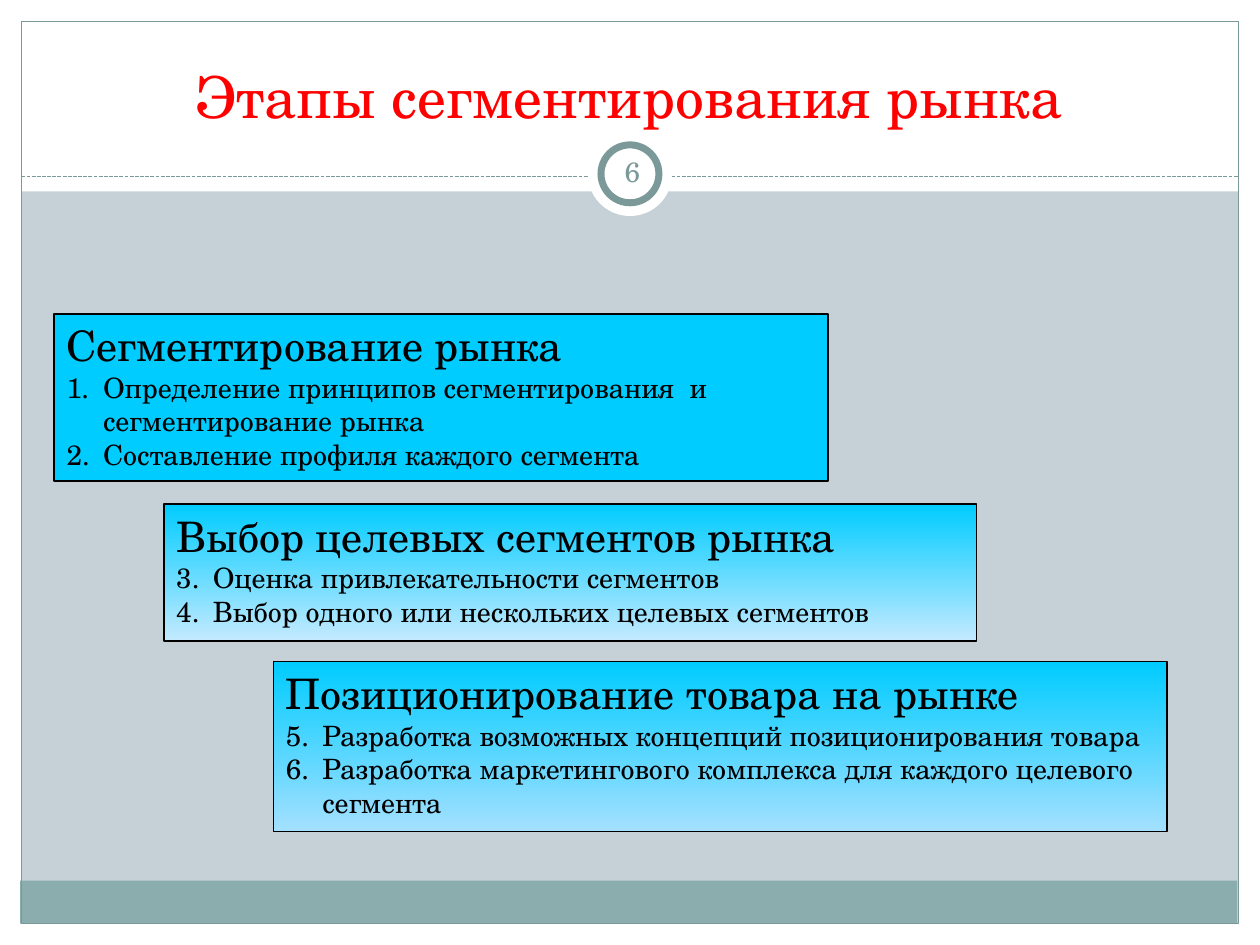
import pptx
import pptx.dml.color
import pptx.enum.dml
import pptx.enum.shapes
import pptx.enum.text
import pptx.oxml
import pptx.oxml.ns
import pptx.util

WIDTH, HEIGHT = 10, 7.5
MARGIN = 0.17
FRAME_WIDTH = WIDTH - 2 * MARGIN
HEADER_HEIGHT = 1.52
RULE_Y = 1.4
BOX_LEFT, BOX_STEP = 0.43, 0.87
INDENT = 0.29
FONT = "TeX Gyre Schola"
TEAL, WHITE, BLACK, CYAN = "7C999A", "FFFFFF", "000000", "00CCFF"
SHAPE = pptx.enum.shapes.MSO_SHAPE
ALIGN = pptx.enum.text.PP_ALIGN
ANCHOR = pptx.enum.text.MSO_ANCHOR

# Top, width, height, lower gradient colour, first number, heading, steps
STAGES = [
    (2.49, 6.14, 1.33, None, 1, "Сегментирование рынка",
     ["Определение принципов сегментирования  и сегментирование рынка",
      "Составление профиля каждого сегмента"]),
    (4, 6.45, 1.09, "C4EAFF", 3, "Выбор целевых сегментов рынка",
     ["Оценка привлекательности сегментов",
      "Выбор одного или нескольких целевых сегментов"]),
    (5.25, 7.09, 1.35, "A4E0FF", 5, "Позиционирование товара на рынке",
     ["Разработка возможных концепций позиционирования товара",
      "Разработка маркетингового комплекса для каждого целевого сегмента"]),
]


def rgb(value):
    return pptx.dml.color.RGBColor.from_string(value)


def inches(*lengths):
    return [pptx.util.Inches(length) for length in lengths]


def set_all(target, values):
    for name, value in values.items():
        setattr(target, name, value)


def add_panel(slide, box, fill=None, line=None, weight=0.75, kind=SHAPE.RECTANGLE):
    panel = slide.shapes.add_shape(kind, *inches(*box))
    panel.shadow.inherit = False
    if fill:
        panel.fill.solid()
        panel.fill.fore_color.rgb = rgb(fill)
    else:
        panel.fill.background()
    if line:
        panel.line.color.rgb = rgb(line)
        panel.line.width = pptx.util.Pt(weight)
    else:
        panel.line.fill.background()
    return panel


def write(paragraph, text, size, color, align=ALIGN.LEFT):
    paragraph.alignment = align
    run = paragraph.add_run()
    run.text = text
    set_all(run.font, {"name": FONT, "size": pptx.util.Pt(size)})
    run.font.color.rgb = rgb(color)


def set_hanging(paragraph, start=None):
    properties = paragraph._p.get_or_add_pPr()
    indent = pptx.util.Inches(INDENT)
    properties.set("marL", str(indent))
    properties.set("indent", str(-indent))
    if start:
        properties.append(pptx.oxml.parse_xml(
            f'<a:buAutoNum {pptx.oxml.ns.nsdecls("a")} '
            f'type="arabicPeriod" startAt="{start}"/>'))


def add_frame(slide):
    # White margins, footer band and outline
    for box in [(0, HEIGHT - MARGIN, WIDTH, MARGIN), (0, 0, WIDTH, HEADER_HEIGHT),
                (0, 0, MARGIN, HEIGHT), (WIDTH - MARGIN, 0, MARGIN, HEIGHT)]:
        add_panel(slide, box, WHITE)
    add_panel(slide, (0.16, 6.99, FRAME_WIDTH, 0.34), "8CADAE")
    add_panel(slide, (MARGIN, MARGIN, FRAME_WIDTH, HEIGHT - 2 * MARGIN), line=TEAL)

    # Dashed rule under the title
    rule = slide.shapes.add_connector(
        pptx.enum.shapes.MSO_CONNECTOR.STRAIGHT,
        *inches(MARGIN, RULE_Y, WIDTH - MARGIN, RULE_Y))
    rule.line.color.rgb = rgb(TEAL)
    set_all(rule.line, {"width": pptx.util.Pt(0.75),
                        "dash_style": pptx.enum.dml.MSO_LINE.SQUARE_DOT})
    rule._element.spPr.append(pptx.oxml.parse_xml(
        f'<a:effectLst {pptx.oxml.ns.nsdecls("a")}/>'))


def add_page_number(slide, number):
    for size, line in [(0.67, None), (0.46, TEAL)]:
        box = ((WIDTH - size) / 2, 1.38 - size / 2, size, size)
        add_panel(slide, box, WHITE, line, 4, SHAPE.OVAL)
    label = slide.shapes.add_textbox(*inches(4.77, 1.12, 0.5, 0.48)).text_frame
    inset = pptx.util.Inches(0.05)
    set_all(label, {"word_wrap": True, "vertical_anchor": ANCHOR.MIDDLE,
                    "margin_left": inset, "margin_right": inset,
                    "margin_top": inset, "margin_bottom": inset})
    write(label.paragraphs[0], number, 16, TEAL, ALIGN.CENTER)


def add_title(slide, text):
    title = slide.shapes.title
    left, top, width, height = inches(0.33, 0.25, 9.33, 0.83)
    set_all(title, {"left": left, "top": top, "width": width, "height": height})
    set_all(title.text_frame, {"vertical_anchor": ANCHOR.BOTTOM, "word_wrap": True,
                               "auto_size": pptx.enum.text.MSO_AUTO_SIZE.NONE})
    write(title.text_frame.paragraphs[0], text, 33, "FF0000", ALIGN.CENTER)
    # Bring the title in front of the white header
    slide.shapes._spTree.append(title._element)


def add_stage(slide, column, top, width, height, fade, start, heading, steps):
    box = (BOX_LEFT + column * BOX_STEP, top, width, height)
    stage = add_panel(slide, box, CYAN, BLACK, 1)
    if fade:
        stage.fill.gradient()
        stage.fill.gradient_angle = 270
        for stop, color, position in zip(stage.fill.gradient_stops, (CYAN, fade), (0, 1)):
            stop.color.rgb = rgb(color)
            stop.position = position
    frame = stage.text_frame
    set_all(frame, {"word_wrap": True, "vertical_anchor": ANCHOR.TOP})
    write(frame.paragraphs[0], heading, 24, BLACK)
    set_hanging(frame.paragraphs[0])
    for step in steps:
        paragraph = frame.add_paragraph()
        write(paragraph, step, 16, BLACK)
        set_hanging(paragraph, start)


def main():
    deck = pptx.Presentation()
    deck.slide_width, deck.slide_height = inches(WIDTH, HEIGHT)
    slide = deck.slides.add_slide(deck.slide_layouts.get_by_name("Title Only"))
    slide.background.fill.solid()
    slide.background.fill.fore_color.rgb = rgb("C5D1D7")

    add_frame(slide)
    add_title(slide, "Этапы сегментирования рынка")
    for column, stage in enumerate(STAGES):
        add_stage(slide, column, *stage)
    add_page_number(slide, "6")
    deck.save("out.pptx")


if __name__ == "__main__":
    main()
